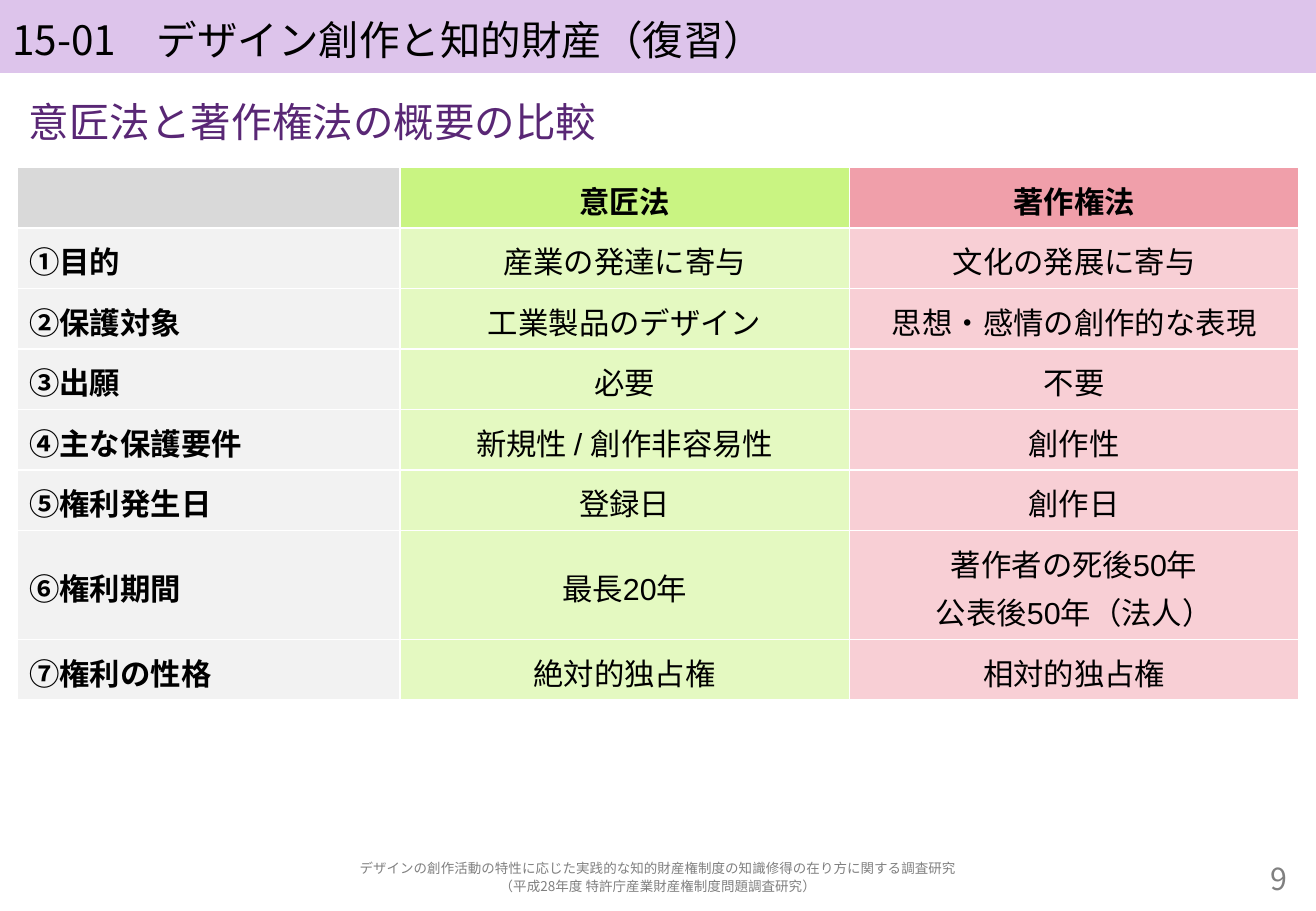
"""Build the slide that compares design law with copyright law."""
from dataclasses import dataclass
from typing import Any

from lxml import etree
from pptx import Presentation
from pptx import util as u
from pptx.dml.color import RGBColor
from pptx.enum import text as t
from pptx.oxml import ns


@dataclass(frozen=True)
class Theme:
    """Colours, fonts and type sizes of the slide."""
    band: str = "DDC4EB"
    ink: str = "000000"
    head: str = "592775"
    note: str = "808080"
    rule: str = "FFFFFF"
    top: tuple[str, ...] = ("D9D9D9", "C9F482", "F09FAA")
    body: tuple[str, ...] = ("F2F2F2", "E4F9C1", "F8CFD5")
    sans: str = "Noto Sans CJK JP"
    latin: str = "Arial"
    big: float = 24
    mid: float = 18
    small: float = 8


@dataclass(frozen=True)
class Style:
    """Type style of a block of text."""
    size: float
    color: str
    font: str
    align: Any = t.PP_ALIGN.LEFT
    bold: bool = False


@dataclass(frozen=True)
class Label:
    """A text box with its place in points."""
    words: str
    box: tuple[float, float, float, float]
    style: Style
    anchor: Any = t.MSO_ANCHOR.MIDDLE


THEME = Theme()
LEFT, WIDE = 10.08, 759.6
FOOT, DEEP = 508.32, 22.32
MID = t.PP_ALIGN.CENTER
TITLE = Label("15-01\u3000デザイン創作と知的財産（復習）".replace("\u3000", "　"), (0, 0, 779.76, 43.2),
              Style(THEME.big, THEME.ink, THEME.sans))
LABELS = (
    Label("意匠法と著作権法の概要の比較", (LEFT, 54.72, WIDE, 33.84),
          Style(THEME.big, THEME.head, THEME.sans), t.MSO_ANCHOR.TOP),
    Label("9", (673.2, FOOT, 96.48, DEEP),
          Style(THEME.mid, THEME.note, THEME.sans, t.PP_ALIGN.RIGHT)),
    Label("デザインの創作活動の特性に応じた実践的な知的財産権制度の知識修得の在り方に関する調査研究\n"
          "（平成28年度 特許庁産業財産権制度問題調査研究）", (LEFT, FOOT, WIDE, DEEP),
          Style(THEME.small, THEME.note, THEME.sans, MID)),
)
ROWS = (
    ("", "意匠法", "著作権法"),
    ("①目的", "産業の発達に寄与", "文化の発展に寄与"),
    ("②保護対象", "工業製品のデザイン", "思想・感情の創作的な表現"),
    ("③出願", "必要", "不要"),
    ("④主な保護要件", "新規性 / 創作非容易性", "創作性"),
    ("⑤権利発生日", "登録日", "創作日"),
    ("⑥権利期間", "最長20年", "著作者の死後50年\n公表後50年（法人）"),
    ("⑦権利の性格", "絶対的独占権", "相対的独占権"),
)
COLS = (226.8, 266.4, 266.4)
ROW, TALL = 33.84, 56.88


def apply(item: Any, vals: dict[str, Any]) -> None:
    """Set each named attribute of an item."""
    for name, val in vals.items():
        setattr(item, name, val)


def paint(item: Any, color: str) -> None:
    """Give an item a solid fill."""
    item.fill.solid()
    item.fill.fore_color.rgb = RGBColor.from_string(color)


def write(frame: Any, words: str, style: Style) -> None:
    """Write styled lines into a text frame."""
    frame.text = words
    for para in frame.paragraphs:
        apply(para, {"alignment": style.align, "line_spacing": 1.1, "space_before": u.Pt(0)})
        for run in para.runs:
            apply(run.font, {"size": u.Pt(style.size), "name": style.font, "bold": style.bold})
            run.font.color.rgb = RGBColor.from_string(style.color)
            east = etree.SubElement(run.font._element, ns.qn("a:ea"))
            east.set("typeface", THEME.sans)


def place(shape: Any, label: Label) -> None:
    """Put a label into a shape at its own place."""
    names = ("left", "top", "width", "height")
    apply(shape, {name: u.Pt(val) for name, val in zip(names, label.box)})
    apply(shape.text_frame, {"word_wrap": True, "auto_size": t.MSO_AUTO_SIZE.NONE,
                             "vertical_anchor": label.anchor,
                             "margin_top": 0, "margin_bottom": 0})
    write(shape.text_frame, label.words, label.style)


def edge(cell: Any) -> None:
    """Draw thin rules on the four sides of a cell."""
    props = cell._tc.get_or_add_tcPr()
    for spot, side in enumerate(("lnL", "lnR", "lnT", "lnB")):
        line = etree.Element(ns.qn(f"a:{side}"), w=str(u.Pt(1)))
        fill = etree.SubElement(line, ns.qn("a:solidFill"))
        etree.SubElement(fill, ns.qn("a:srgbClr"), val=THEME.rule)
        props.insert(spot, line)


def grid(slide: Any) -> None:
    """Draw the table of the two laws."""
    highs = [TALL if any("\n" in cell for cell in row) else ROW for row in ROWS]
    frame = slide.shapes.add_table(len(ROWS), len(COLS), u.Pt(LEFT), u.Pt(99.36),
                                   u.Pt(sum(COLS)), u.Pt(sum(highs)))
    table = frame.table
    for col, wide in zip(table.columns, COLS):
        col.width = u.Pt(wide)
    for r, (row, high) in enumerate(zip(ROWS, highs)):
        table.rows[r].height = u.Pt(high)
        for c, words in enumerate(row):
            cell = table.cell(r, c)
            cell.vertical_anchor = t.MSO_ANCHOR.MIDDLE
            paint(cell, (THEME.body if r else THEME.top)[c])
            edge(cell)
            align = MID if c else t.PP_ALIGN.LEFT
            write(cell.text_frame, words,
                  Style(THEME.mid, THEME.ink, THEME.latin, align, r == 0 or c == 0))


def main() -> None:
    """Build and save the slide."""
    deck = Presentation()
    apply(deck, {"slide_width": u.Pt(779.76), "slide_height": u.Pt(540)})
    slide = deck.slides.add_slide(deck.slide_layouts[5])
    paint(slide.shapes.title, THEME.band)
    place(slide.shapes.title, TITLE)
    grid(slide)
    for label in LABELS:
        place(slide.shapes.add_textbox(0, 0, 0, 0), label)
    deck.save("out.pptx")


if __name__ == "__main__":
    main()
